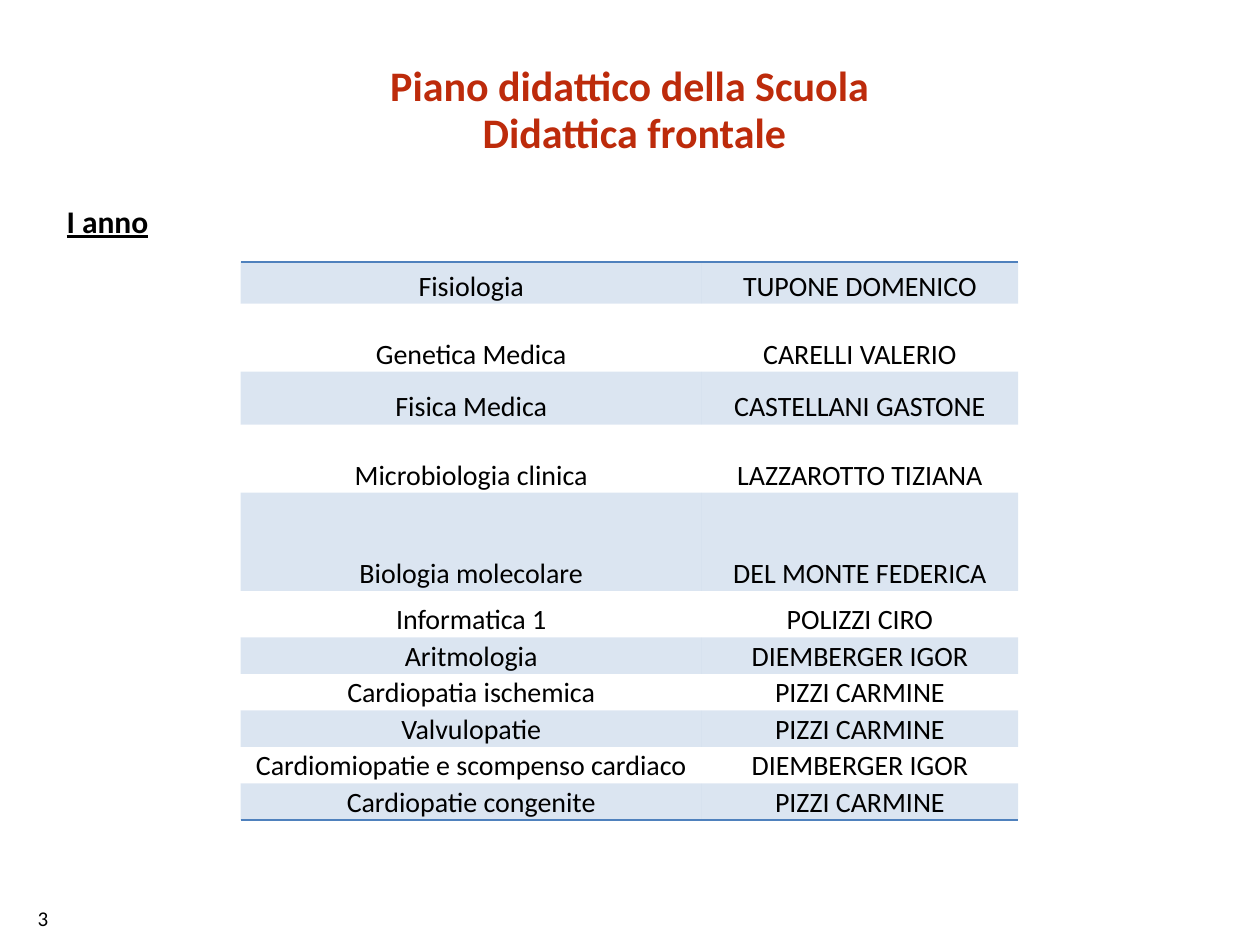
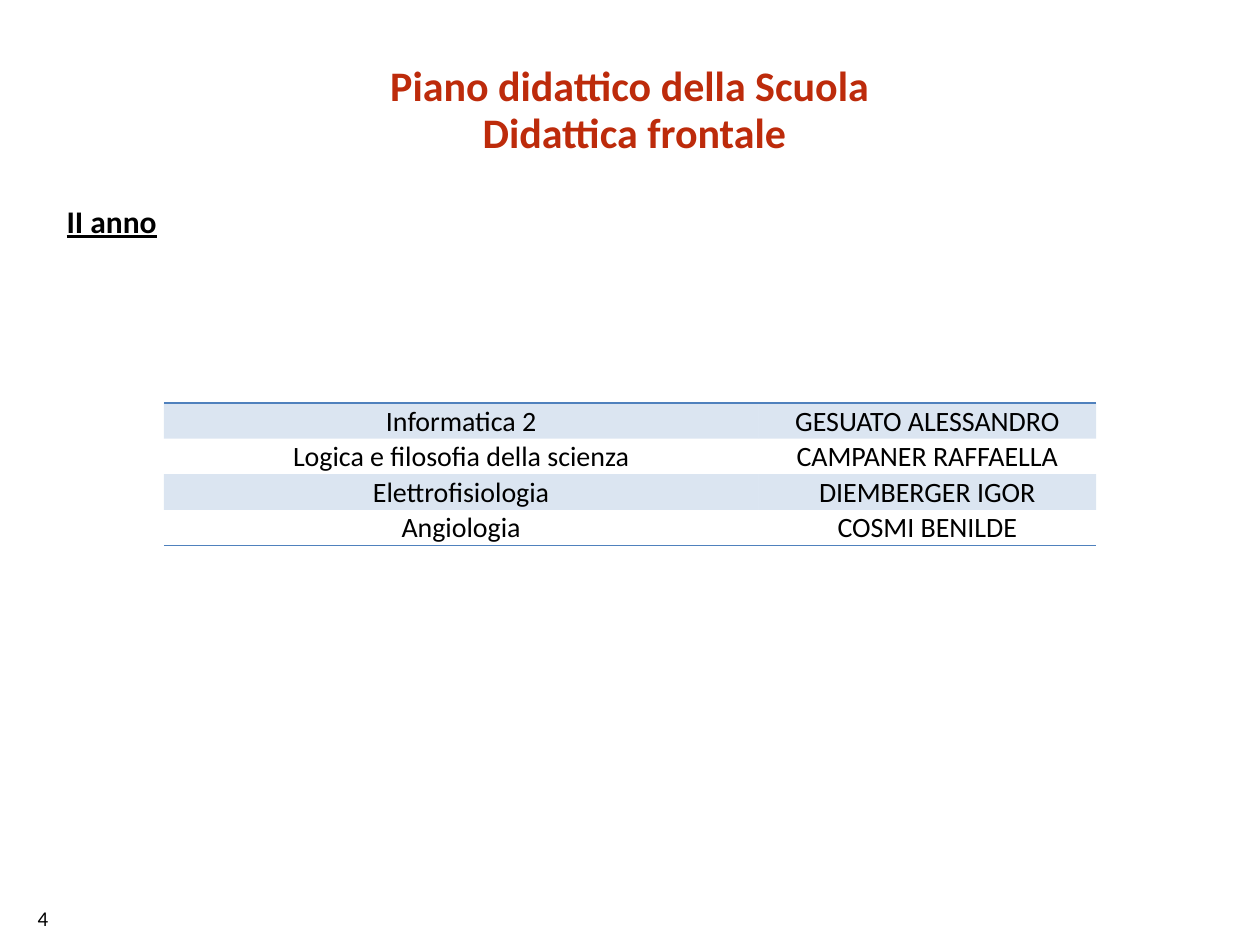
from lxml import etree
from pptx import Presentation
from pptx import util as u
from pptx.dml.color import RGBColor
from pptx.enum import text
from pptx.oxml import ns

COLUMNS, ROWS = 100, 75
FONT = "Calibri"
RED, BLACK, BLUE = "BD2B0B", "000000", "4F81BD"
NO_STYLE = "{2D5ABB26-0587-4C30-8999-92F81FD0307C}"
CENTER = text.PP_ALIGN.CENTER

TITLE = ["Piano didattico della Scuola ", "Didattica frontale"]
YEARS = [
    dict(number="3", year="I anno", at=(19.1, 20.8), cols=(36.6, 25.1),
         heights=[3.3, 5.4, 4.2, 5.4, 7.8, 3.7] + [2.9] * 5,
         courses=[
             ("Fisiologia", "TUPONE DOMENICO"),
             ("Genetica Medica", "CARELLI VALERIO"),
             ("Fisica Medica", "CASTELLANI GASTONE"),
             ("Microbiologia clinica", "LAZZAROTTO TIZIANA"),
             ("Biologia molecolare", "DEL MONTE FEDERICA"),
             ("Informatica 1", "POLIZZI CIRO"),
             ("Aritmologia", "DIEMBERGER IGOR"),
             ("Cardiopatia ischemica", "PIZZI CARMINE"),
             ("Valvulopatie", "PIZZI CARMINE"),
             ("Cardiomiopatie e scompenso cardiaco", "DIEMBERGER IGOR"),
             ("Cardiopatie congenite", "PIZZI CARMINE"),
         ]),
    dict(number="4", year="II anno", at=(13, 32), cols=(47.2, 26.8),
         heights=[2.82] * 4,
         courses=[
             ("Informatica 2", "GESUATO ALESSANDRO"),
             ("Logica e filosofia della scienza", "CAMPANER RAFFAELLA"),
             ("Elettrofisiologia", "DIEMBERGER IGOR"),
             ("Angiologia", "COSMI BENILDE"),
         ]),
]


def rgb(value):
    return RGBColor.from_string(value)


class Deck:
    """Style of the study plan and the slide being built."""

    def __init__(self):
        self.prs = Presentation()
        self.prs.slide_width, self.prs.slide_height = u.Inches(10), u.Inches(7.5)
        self.s = None

    def x(self, columns):
        return round(self.prs.slide_width * columns / COLUMNS)

    def y(self, rows):
        return round(self.prs.slide_height * rows / ROWS)

    def box(self, left, top, width, height):
        return self.x(left), self.y(top), self.x(width), self.y(height)

    def slide(self):
        self.s = self.prs.slides.add_slide(self.prs.slide_layouts[5])

    def run(self, p, words, size, color=BLACK, bold=False, underline=False):
        r = p.add_run()
        r.text = words
        f = r.font
        f.name, f.size, f.bold, f.underline = FONT, u.Pt(size), bold, underline
        f.color.rgb = rgb(color)

    def title(self, lines, at):
        sp = self.s.shapes.title
        sp.left, sp.top, sp.width, sp.height = self.box(*at)
        tf = sp.text_frame
        tf.auto_size = text.MSO_AUTO_SIZE.NONE
        tf.vertical_anchor = text.MSO_ANCHOR.TOP
        for i, line in enumerate(lines):
            p = tf.add_paragraph() if i else tf.paragraphs[0]
            p.alignment, p.line_spacing = CENTER, u.Pt(22)
            p.space_before = u.Pt(4.8 if i else 0)
            self.run(p, line, 24, RED, bold=True)

    def label(self, words, at, size, **style):
        tf = self.s.shapes.add_textbox(*self.box(*at)).text_frame
        tf.word_wrap = True
        self.run(tf.paragraphs[0], words, size, **style)

    def border(self, cell, side):
        ln = etree.Element(ns.qn(f"a:ln{side}"), w=str(u.Pt(1)))
        fill = etree.SubElement(ln, ns.qn("a:solidFill"))
        etree.SubElement(fill, ns.qn("a:srgbClr"), val=BLUE)
        cell.fill._xPr.insert(0, ln)

    def cell(self, cell, words, shaded):
        cell.margin_left = cell.margin_top = cell.margin_right = u.Inches(0.01)
        cell.margin_bottom = 0
        cell.vertical_anchor = text.MSO_ANCHOR.BOTTOM
        if shaded:
            cell.fill.solid()
            cell.fill.fore_color.rgb = rgb(BLUE)
            color = cell.fill._xPr.find(".//" + ns.qn("a:srgbClr"))
            etree.SubElement(color, ns.qn("a:alpha"), val="20000")
        else:
            cell.fill.background()
        p = cell.text_frame.paragraphs[0]
        p.alignment = CENTER
        self.run(p, words, 16)

    def table(self, rows, at, cols, heights):
        frame = self.s.shapes.add_table(
            len(rows), len(cols), *self.box(*at, sum(cols), sum(heights)))
        frame.element.find(".//" + ns.qn("a:tableStyleId")).text = NO_STYLE
        table = frame.table
        table.first_row = table.horz_banding = False
        for column, width in zip(table.columns, cols):
            column.width = self.x(width)
        for i, (row, height) in enumerate(zip(table.rows, heights)):
            row.height = self.y(height)
            for cell, words in zip(row.cells, rows[i]):
                self.cell(cell, words, shaded=i % 2 == 0)
                if i == 0:
                    self.border(cell, "T")
                if i == len(rows) - 1:
                    self.border(cell, "B")


def main():
    deck = Deck()
    for plan in YEARS:
        deck.slide()
        deck.label(plan["number"], (2, 71.4, 8.7, 3), 12)
        deck.title(TITLE, (4.3, 5.2, 92.1, 7.1))
        deck.label(plan["year"], (4.3, 15.5, 92.1, 55.1), 18,
                   bold=True, underline=True)
        deck.table(plan["courses"], plan["at"], plan["cols"], plan["heights"])
    deck.prs.save("out.pptx")


if __name__ == "__main__":
    main()
